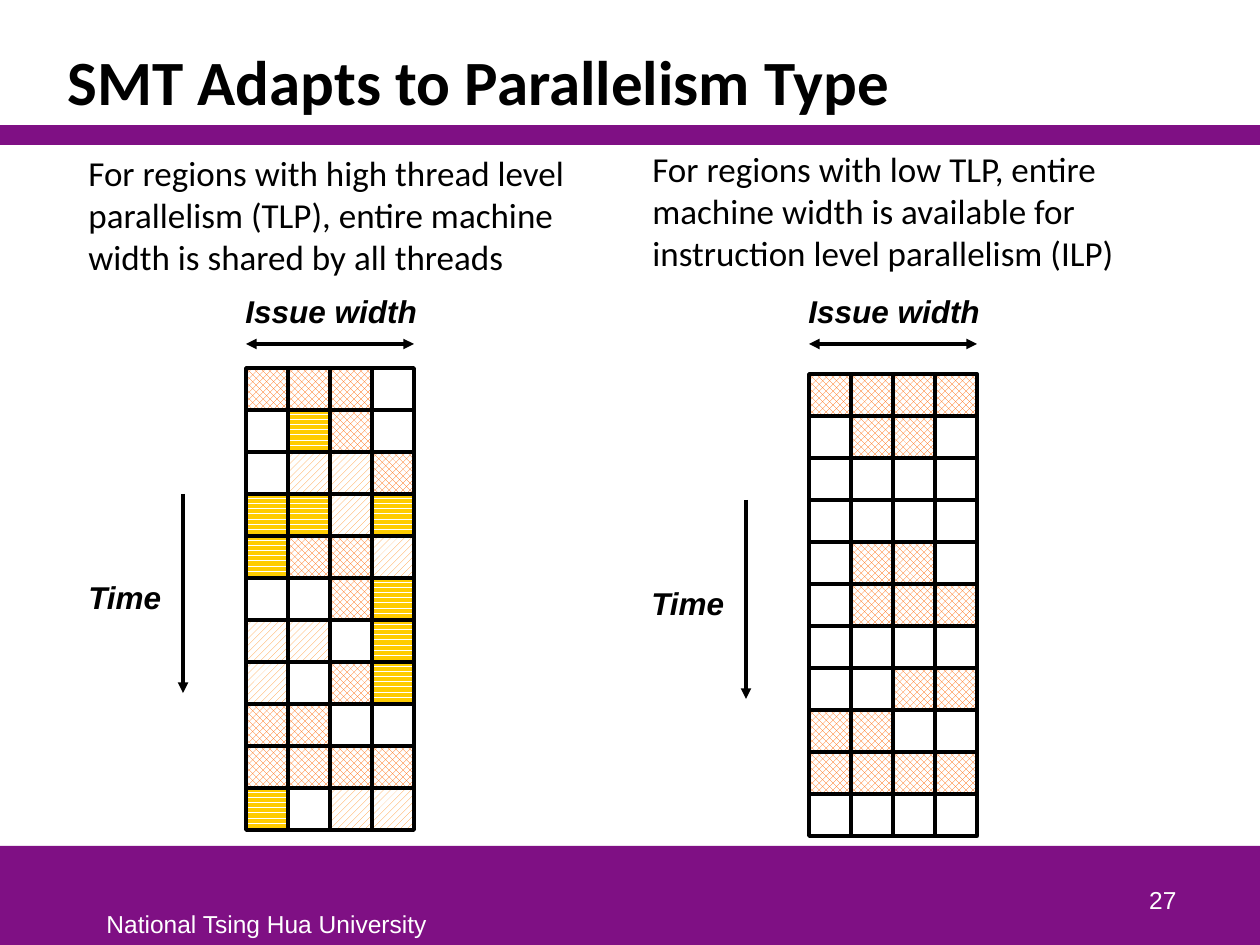
from lxml import etree
from pptx import Presentation
from pptx.dml.color import RGBColor
from pptx.enum.dml import MSO_PATTERN
from pptx.enum.shapes import MSO_CONNECTOR, MSO_SHAPE
from pptx.enum.text import MSO_ANCHOR, MSO_AUTO_SIZE, PP_ALIGN
from pptx.oxml.ns import qn
from pptx.util import Pt

RECTANGLE = MSO_SHAPE.RECTANGLE
STRAIGHT = MSO_CONNECTOR.STRAIGHT
BOTTOM, TOP = MSO_ANCHOR.BOTTOM, MSO_ANCHOR.TOP
LEFT, RIGHT = PP_ALIGN.LEFT, PP_ALIGN.RIGHT
FIT_SHAPE, NO_FIT = MSO_AUTO_SIZE.SHAPE_TO_FIT_TEXT, MSO_AUTO_SIZE.NONE

SCALE = 914400 / 126
PAGE_WIDTH, PAGE_HEIGHT = 1260, 945
CELL = 42
BLACK, WHITE, PURPLE = "000000", "FFFFFF", "7F1084"

THREAD_FILLS = {
    "X": (MSO_PATTERN.SOLID_DIAMOND, "FF6600"),
    "=": (MSO_PATTERN.DARK_HORIZONTAL, "FFCC00"),
    "/": (MSO_PATTERN.WIDE_UPWARD_DIAGONAL, "FF9933"),
}
HIGH_TLP_SLOTS = "XXX. .=X. .//X ==/= =XX/ ..X= //.= /.X= XX.. XXXX =.//".split()
LOW_TLP_SLOTS = "XXXX .XX. .... .... .XX. .XXX .... ..XX XX.. XXXX ....".split()

TITLE = {"name": "Calibri", "size": Pt(36), "bold": True}
BODY = {"name": "Calibri", "size": Pt(20)}
AXIS = {"name": "Arial", "size": Pt(18), "bold": True, "italic": True}
FOOTER = {"name": "Arial", "size": Pt(14)}


def px(*lengths):
    return [round(length * SCALE) for length in lengths]


def color(hex_string):
    return RGBColor.from_string(hex_string)


def write_text(box, text, font, hex_color=BLACK, align=LEFT):
    para = box.text_frame.paragraphs[0]
    para.alignment = align
    span = para.add_run()
    span.text = text
    for name, value in font.items():
        setattr(span.font, name, value)
    span.font.color.rgb = color(hex_color)
    return para


def add_text(page, bounds, text, font, hex_color=BLACK, align=LEFT,
             wrap=True, fit=FIT_SHAPE, anchor=TOP):
    box = page.shapes.add_textbox(*px(*bounds))
    frame = box.text_frame
    frame.word_wrap = wrap
    frame.auto_size = fit
    frame.vertical_anchor = anchor
    write_text(box, text, font, hex_color, align)


def add_bar(page, top, height):
    bar = page.shapes.add_shape(RECTANGLE, *px(0, top, PAGE_WIDTH, height))
    bar.shadow.inherit = False
    bar.fill.solid()
    bar.fill.fore_color.rgb = color(PURPLE)
    bar.line.fill.background()


def add_arrow(page, start, end, heads):
    arrow = page.shapes.add_connector(STRAIGHT, *px(*start, *end))
    arrow.line.width = Pt(2)
    arrow.line.color.rgb = color(BLACK)
    line = arrow.line._get_or_add_ln()
    for head in heads:
        etree.SubElement(line, qn(head), type="triangle")
    etree.SubElement(arrow._element.spPr, qn("a:effectLst"))


def add_slot(page, left, top, thread):
    slot = page.shapes.add_shape(RECTANGLE, *px(left, top, CELL, CELL))
    slot.shadow.inherit = False
    slot.line.width = Pt(2)
    slot.line.color.rgb = color(BLACK)
    if thread not in THREAD_FILLS:
        slot.fill.background()
        return
    pattern, ink = THREAD_FILLS[thread]
    slot.fill.patterned()
    slot.fill.pattern = pattern
    slot.fill.fore_color.rgb = color(ink)
    slot.fill.back_color.rgb = color(WHITE)


def add_frame(page):
    add_bar(page, 846, PAGE_HEIGHT - 846)
    add_bar(page, 125, 20)
    add_text(page, (94, 903, 348, 42), "National Tsing Hua University",
             FOOTER, WHITE, wrap=False)
    add_text(page, (927, 858, 262, 63), "27", FOOTER, WHITE, RIGHT,
             fit=NO_FIT, anchor=BOTTOM)


def add_title(page, bounds, text):
    title = page.shapes.title
    title.left, title.top, title.width, title.height = px(*bounds)
    title.text_frame.auto_size = NO_FIT
    title.text_frame.vertical_anchor = BOTTOM
    write_text(title, text, TITLE).line_spacing = 0.85


def add_issue_chart(page, left, grid_top, slots):
    grid_left = left + 170
    for row, threads in enumerate(slots):
        for column, thread in enumerate(threads):
            add_slot(page, grid_left + column * CELL, grid_top + row * CELL, thread)
    grid_right = grid_left + len(slots[0]) * CELL
    add_arrow(page, (grid_left, 344), (grid_right, 344), ("a:headEnd", "a:tailEnd"))
    add_text(page, (left + 157, 286, 197, 50), "Issue width", AXIS, wrap=False)
    time_x = left + 107
    add_arrow(page, (time_x, grid_top + 126), (time_x, grid_top + 325), ("a:tailEnd",))
    add_text(page, (left, grid_top + 204, 98, 50), "Time", AXIS, wrap=False)


def main():
    deck = Presentation()
    deck.slide_width, deck.slide_height = px(PAGE_WIDTH, PAGE_HEIGHT)
    page = deck.slides.add_slide(deck.slide_layouts[5])
    add_frame(page)
    add_title(page, (55, 32, 1130, 93), "SMT Adapts to Parallelism Type")
    add_issue_chart(page, 76, 368, HIGH_TLP_SLOTS)
    add_issue_chart(page, 639, 374, LOW_TLP_SLOTS)
    add_text(page, (76, 145, 558, 140),
             "For regions with high thread level parallelism (TLP), "
             "entire machine width is shared by all threads", BODY)
    add_text(page, (640, 141, 556, 140),
             "For regions with low TLP, entire machine width is available "
             "for instruction level parallelism (ILP)", BODY)
    deck.save("out.pptx")


if __name__ == "__main__":
    main()
